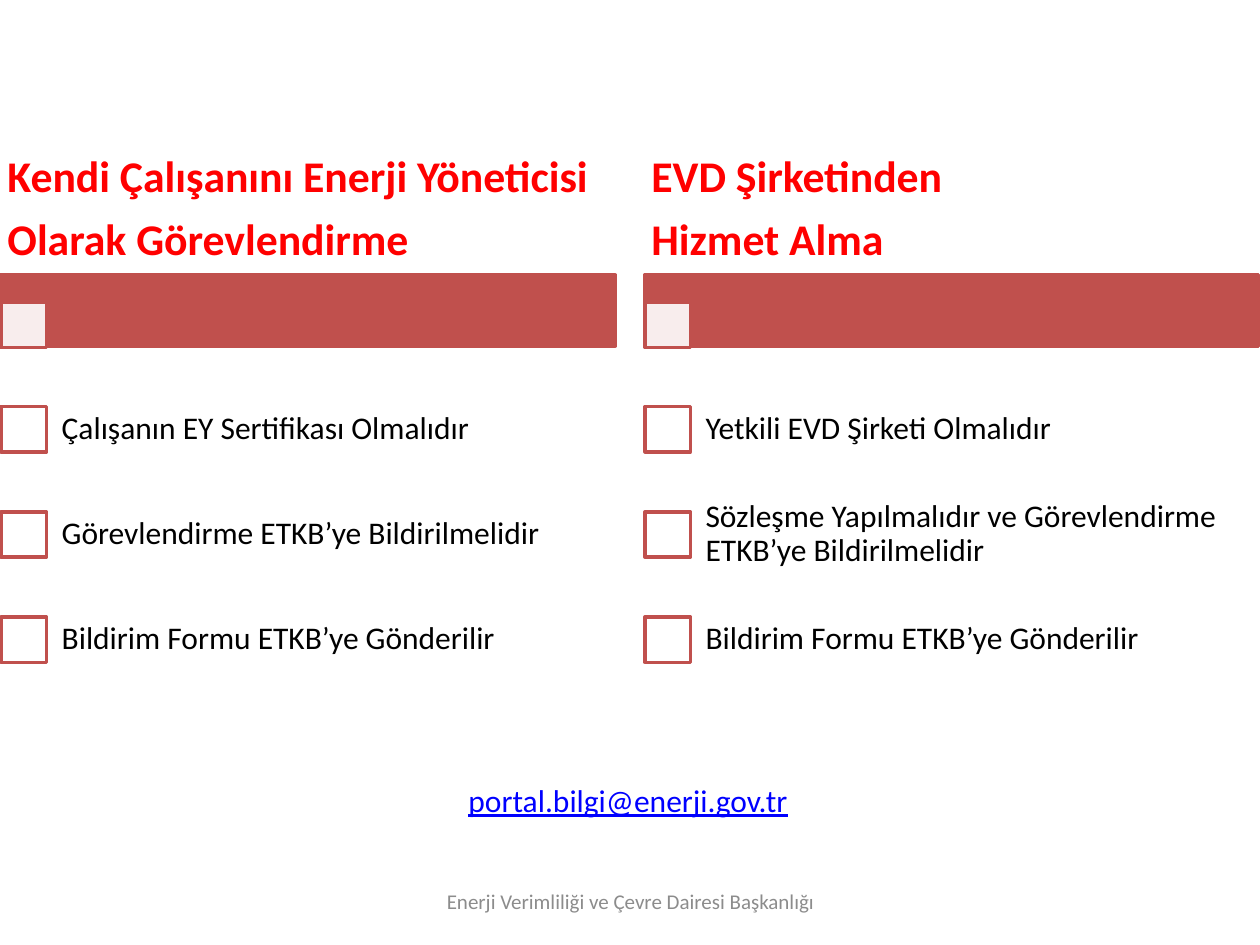
from lxml.etree import SubElement
from pptx import Presentation
from pptx.dml.color import RGBColor
from pptx.enum.shapes import MSO_SHAPE
from pptx.enum.text import MSO_ANCHOR, PP_ALIGN
from pptx.oxml.ns import qn
from pptx.util import Inches, Pt

BRICK = RGBColor(0xC0, 0x50, 0x4D)
WHITE = RGBColor(0xFF, 0xFF, 0xFF)
RED = RGBColor(0xFF, 0x00, 0x00)
BLACK = RGBColor(0x00, 0x00, 0x00)
BLUE = RGBColor(0x00, 0x00, 0xFF)
GRAY = RGBColor(0x8C, 0x8C, 0x8C)

COLUMN_WIDTH = 4.87
CHECK_SIZE = 0.36
ROW_HEIGHT = 0.835
COLUMNS = [
    (0.01, ["Kendi Çalışanını Enerji Yöneticisi", "Olarak Görevlendirme"],
     ["Çalışanın EY Sertifikası Olmalıdır",
      "Görevlendirme ETKB’ye Bildirilmelidir",
      "Bildirim Formu ETKB’ye Gönderilir"]),
    (5.12, ["EVD Şirketinden", "Hizmet Alma"],
     ["Yetkili EVD Şirketi Olmalıdır",
      "Sözleşme Yapılmalıdır ve Görevlendirme ETKB’ye Bildirilmelidir",
      "Bildirim Formu ETKB’ye Gönderilir"]),
]


def add_rectangle(page, left, top, width, height, color, opacity=None):
    box = page.shapes.add_shape(MSO_SHAPE.RECTANGLE, Inches(left), Inches(top),
                                Inches(width), Inches(height))
    box.shadow.inherit = False
    box.fill.solid()
    box.fill.fore_color.rgb = color
    box.line.color.rgb = BRICK
    box.line.width = Pt(2)
    if opacity is not None:
        fill_color = box.fill._xPr.find(qn("a:solidFill"))[0]
        SubElement(fill_color, qn("a:alpha"), val=str(opacity * 1000))


def add_text(page, left, top, width, height, lines, size, color, margins=(0.1, 0.05),
             anchor=MSO_ANCHOR.MIDDLE, align=PP_ALIGN.LEFT, wrap=True):
    """Add a text box and return its paragraphs."""
    box = page.shapes.add_textbox(Inches(left), Inches(top), Inches(width), Inches(height))
    frame = box.text_frame
    frame.word_wrap = wrap
    frame.vertical_anchor = anchor
    frame.margin_left = frame.margin_right = Inches(margins[0])
    frame.margin_top = frame.margin_bottom = Inches(margins[1])
    frame.text = "\n".join(lines)
    for para in frame.paragraphs:
        para.alignment = align
        para.font.name = "Calibri"
        para.font.size = Pt(size)
        para.font.color.rgb = color
    return frame.paragraphs


def space_lines(paragraphs, size):
    for para in paragraphs:
        para.line_spacing = 0.9
        para.space_after = Pt(size * 0.35)


def add_column(page, left, top, width, heading, items):
    # Heading bar with its pale check box
    add_rectangle(page, left, top + 1.03, width, 0.57, BRICK)
    add_rectangle(page, left, top + 1.25, CHECK_SIZE, CHECK_SIZE, WHITE, opacity=90)

    # Heading
    paragraphs = add_text(page, left, top, width, 1.03, heading, 25, RED, (0.05, 0.03))
    space_lines(paragraphs, 25)
    for para in paragraphs:
        para.font.bold = True

    # Requirements, one check box each
    for index, item in enumerate(items):
        row_top = top + 1.84 + index * ROW_HEIGHT
        add_rectangle(page, left, row_top + (ROW_HEIGHT - CHECK_SIZE) / 2,
                      CHECK_SIZE, CHECK_SIZE, WHITE)
        paragraphs = add_text(page, left + 0.34, row_top, width - 0.34, ROW_HEIGHT,
                              [item], 18, BLACK, (0.14, 0.14))
        space_lines(paragraphs, 18)


def add_contact(page, left, top, width, height):
    address = add_text(page, left, top, width, height, ["portal.bilgi@enerji.gov.tr"],
                       18, BLUE, anchor=MSO_ANCHOR.TOP, wrap=False)[0]
    address.font.underline = True


def add_footer(page, left, top, width, height):
    add_text(page, left, top, width, height,
             ["Enerji Verimliliği ve Çevre Dairesi Başkanlığı"],
             12, GRAY, align=PP_ALIGN.CENTER)


def main():
    deck = Presentation()
    deck.slide_width = Inches(10)
    deck.slide_height = Inches(7.5)
    page = deck.slides.add_slide(deck.slide_layouts[6])
    add_footer(page, 3.42, 6.95, 3.17, 0.4)
    for left, heading, items in COLUMNS:
        add_column(page, left, 1.15, COLUMN_WIDTH, heading, items)
    add_contact(page, 3.62, 6.15, 2.76, 0.4)
    deck.save("out.pptx")


if __name__ == "__main__":
    main()
